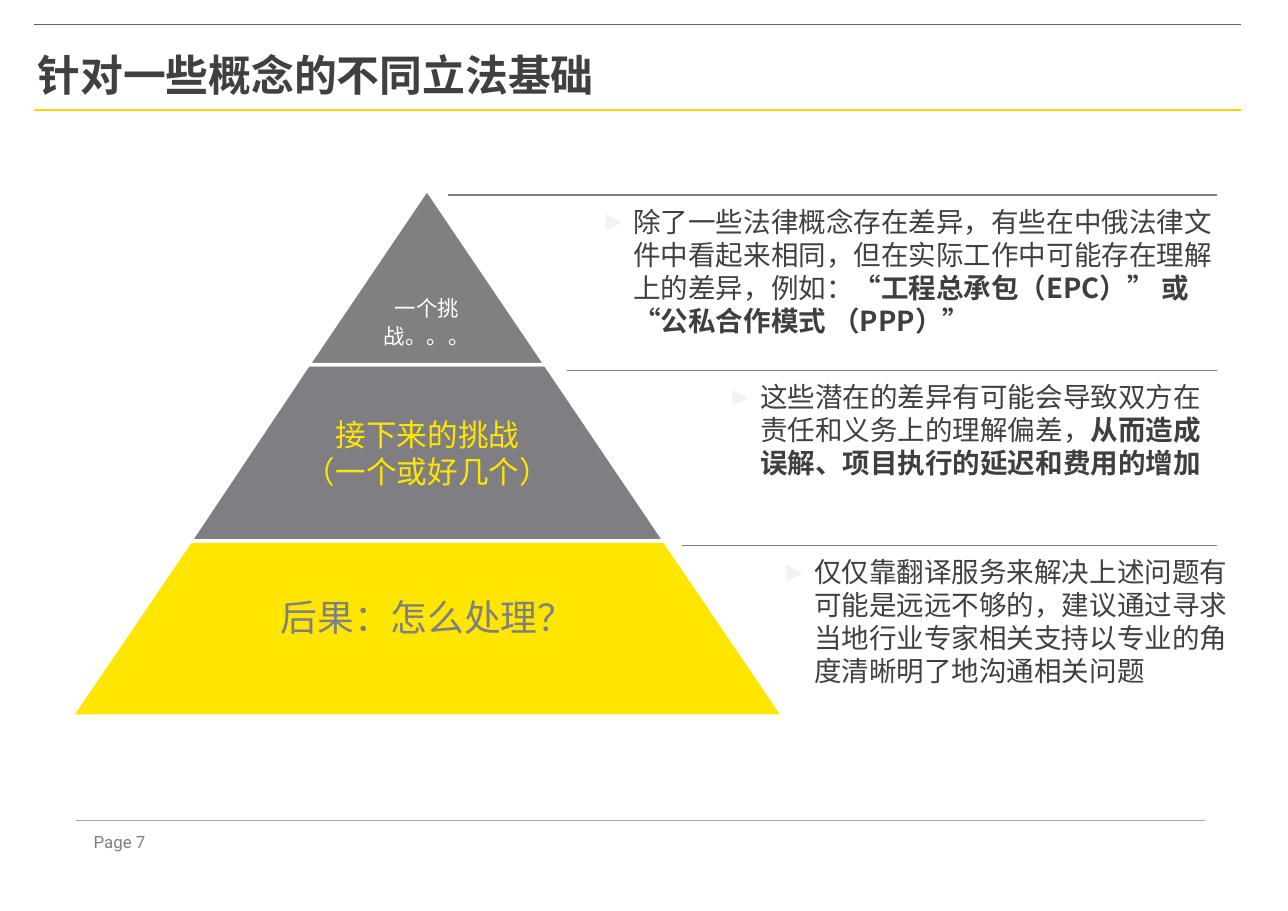
import pptx
import pptx.util
import pptx.dml.color
import pptx.enum.shapes
import pptx.enum.text
import pptx.oxml
import pptx.oxml.ns
import lxml.etree

Inches = pptx.util.Inches
Pt = pptx.util.Pt
SHAPE = pptx.enum.shapes.MSO_SHAPE
ALIGN = pptx.enum.text.PP_ALIGN
ANCHOR = pptx.enum.text.MSO_ANCHOR
qn = pptx.oxml.ns.qn

COLORS = {
    "white": "FFFFFF", "yellow": "FFE600", "gold": "FFD200",
    "gray": "808080", "slate": "7F7E82", "rule": "646464",
    "footer_rule": "A5A4A7", "text": "404040", "strong": "3F3F41",
    "bullet": "F2F2F2",
}


def rgb(name):
    return pptx.dml.color.RGBColor.from_string(COLORS[name])


class SlideBuilder:
    font = "Noto Sans CJK SC"
    insets = (0.1, 0.05, 0.1, 0.05)

    def __init__(self, prs):
        self.slide = prs.slides.add_slide(prs.slide_layouts[5])
        self.shapes = self.slide.shapes

    def frame(self, sp, insets, anchor=ANCHOR.TOP):
        tf = sp.text_frame
        tf.word_wrap = True
        tf.auto_size = pptx.enum.text.MSO_AUTO_SIZE.NONE
        tf.vertical_anchor = anchor
        (tf.margin_left, tf.margin_top,
         tf.margin_right, tf.margin_bottom) = map(Inches, insets)
        return tf

    def style(self, p, size, color, align=ALIGN.CENTER, spacing=None, font=None):
        """Set the paragraph's style; the font serves Latin and East Asian text."""
        p.alignment = align
        if spacing:
            p.line_spacing = Pt(spacing)
        p.font.size = Pt(size)
        p.font.name = font or self.font
        p.font.color.rgb = rgb(color)
        props = p._p.get_or_add_pPr().find(qn("a:defRPr"))
        ea = lxml.etree.SubElement(props, qn("a:ea"))
        ea.set("typeface", font or self.font)

    def paint(self, sp, fill, outline=None):
        sp.shadow.inherit = False
        sp.fill.solid()
        sp.fill.fore_color.rgb = rgb(fill)
        if outline:
            sp.line.color.rgb = rgb(outline)
            sp.line.width = Pt(2.25)
        else:
            sp.line.fill.background()

    def title(self, text, box):
        sp = self.shapes.title
        sp.left, sp.top, sp.width, sp.height = map(Inches, box)
        p = self.frame(sp, (0, 0.04, 0, 0)).paragraphs[0]
        p.add_run().text = text
        self.style(p, 28, "text", ALIGN.LEFT)
        p.font.bold = True

    def rule(self, x1, x2, y, color, width=0.75):
        line = self.shapes.add_connector(
            pptx.enum.shapes.MSO_CONNECTOR.STRAIGHT,
            Inches(x1), Inches(y), Inches(x2), Inches(y))
        line.line.color.rgb = rgb(color)
        line.line.width = Pt(width)
        lxml.etree.SubElement(line._element.spPr, qn("a:effectLst"))

    def label(self, text, box, size, color, font):
        sp = self.shapes.add_textbox(*map(Inches, box))
        p = self.frame(sp, (0, 0, 0, 0)).paragraphs[0]
        p.add_run().text = text
        self.style(p, size, color, spacing=14, font=font)

    def tier(self, sp, lines, fill, size, color, spacing):
        self.paint(sp, fill, "white")
        tf = self.frame(sp, self.insets, ANCHOR.MIDDLE)
        for i, text in enumerate(lines):
            p = tf.add_paragraph() if i else tf.paragraphs[0]
            p.add_run().text = text
            self.style(p, size, color, spacing=spacing)

    def triangle(self, box, *style):
        sp = self.shapes.add_shape(SHAPE.ISOSCELES_TRIANGLE, *map(Inches, box))
        self.tier(sp, *style)

    def trapezoid(self, points, *style):
        corners = [(Inches(x), Inches(y)) for x, y in points]
        builder = self.shapes.build_freeform(*corners[0])
        builder.add_line_segments(corners[1:], close=True)
        self.tier(builder.convert_to_shape(), *style)

    def note(self, box, plain, strong=""):
        """Add a bulleted comment whose closing words may be bold."""
        sp = self.shapes.add_shape(SHAPE.RECTANGLE, *map(Inches, box))
        self.paint(sp, "white")
        p = self.frame(sp, (0.1, 0.09, 0.1, 0.05)).paragraphs[0]
        p.add_run().text = plain
        if strong:
            r = p.add_run()
            r.text = strong
            r.font.bold = True
            r.font.color.rgb = rgb("strong")
        self.style(p, 18, "text", ALIGN.LEFT, 21.6)
        p.space_before = Pt(3.6)
        props = p._p.get_or_add_pPr()
        props.set("marL", str(Inches(0.3)))
        props.set("indent", str(-Inches(0.3)))
        ns = pptx.oxml.ns.nsdecls("a")
        for xml in (
            f'<a:buClr {ns}><a:srgbClr val="{COLORS["bullet"]}"/></a:buClr>',
            f'<a:buFont {ns} typeface="Arial"/>',
            f'<a:buChar {ns} char="►"/>',
        ):
            props.find(qn("a:defRPr")).addprevious(pptx.oxml.parse_xml(xml))


def main():
    prs = pptx.Presentation()
    prs.slide_width, prs.slide_height = Inches(11.69), Inches(8.27)
    s = SlideBuilder(prs)

    s.rule(0.31, 11.26, 1, "gold", 1)
    s.rule(0.31, 11.26, 0.22, "rule", 0.5)
    s.label("Page 7", (0.69, 7.54, 0.79, 0.22), 11, "slate", "Roboto")
    s.rule(0.69, 10.94, 7.45, "footer_rule")
    s.title("针对一些概念的不同立法基础", (0.34, 0.4, 11.02, 0.97))

    notes = [
        ((5.35, 1.77, 5.84, 1.56), 4.07,
         "除了一些法律概念存在差异，有些在中俄法律文件中看起来相同，"
         "但在实际工作中可能存在理解上的差异，例如：",
         "“工程总承包（EPC）” 或 “公私合作模式 （PPP）”"),
        ((6.5, 3.36, 4.69, 1.56), 5.15,
         "这些潜在的差异有可能会导致双方在责任和义务上的理解偏差，",
         "从而造成误解、项目执行的延迟和费用的增加"),
        ((6.99, 4.95, 4.28, 1.38), 6.19,
         "仅仅靠翻译服务来解决上述问题有可能是远远不够的，"
         "建议通过寻求当地行业专家相关支持以专业的角度清晰明了地沟通相关问题",
         ""),
    ]
    for box, rule_left, plain, strong in notes:
        s.note(box, plain, strong)
        s.rule(rule_left, 11.05, box[1], "gray")

    s.trapezoid([(0.65, 6.5), (1.73, 4.91), (6.03, 4.91), (7.11, 6.5)],
                ["后果：怎么处理？"], "yellow", 24, "gray", 14)
    s.trapezoid([(1.73, 4.91), (2.8, 3.31), (4.95, 3.31), (6.03, 4.91)],
                ["接下来的挑战", "（一个或好几个）"], "slate", 20, "yellow", 24)
    s.triangle((2.8, 1.72, 2.15, 1.59),
               ["一个挑战。。。"], "gray", 14, "white", 18)

    prs.save("out.pptx")


if __name__ == "__main__":
    main()
